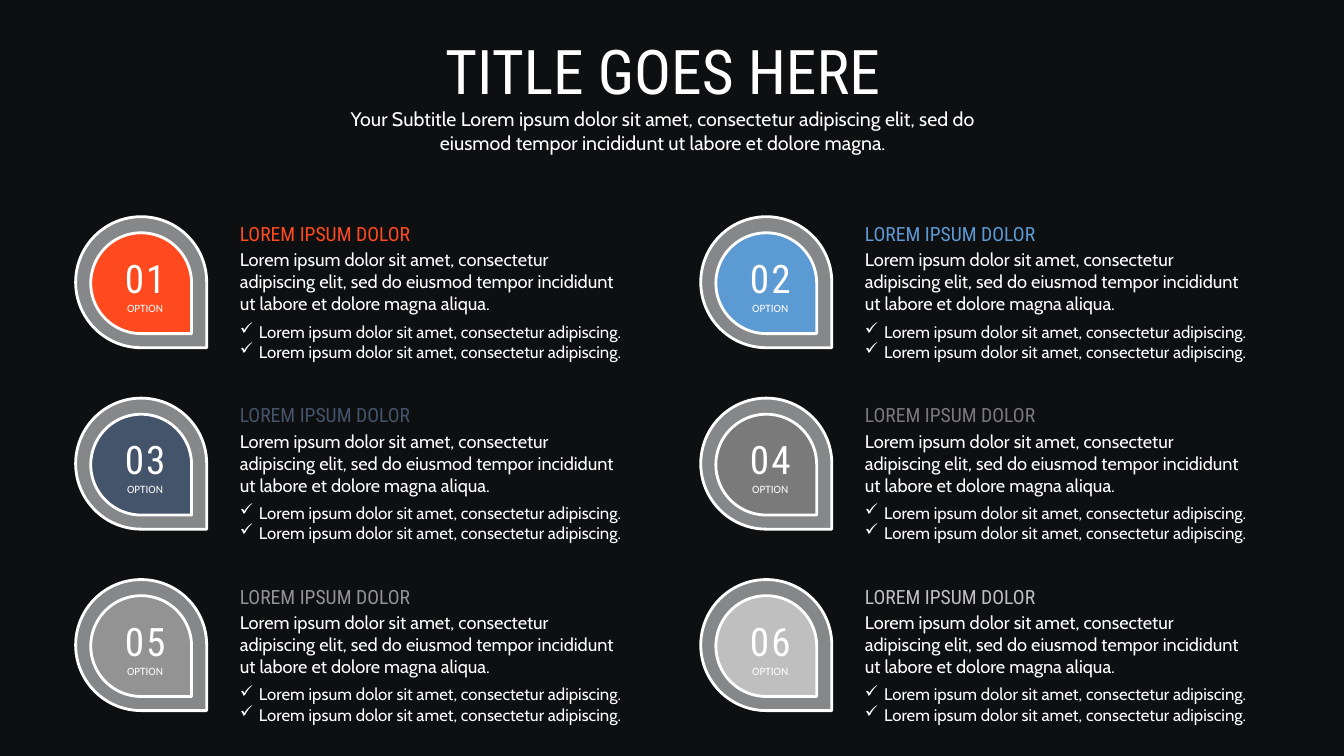
"""Build a slide of six numbered options, each with a teardrop badge and a text block."""
from dataclasses import dataclass
from typing import Any

from lxml import etree
from pptx import Presentation
from pptx.dml.color import RGBColor
from pptx.enum.shapes import MSO_SHAPE
from pptx.enum.text import MSO_ANCHOR, PP_ALIGN
from pptx.oxml.ns import qn
from pptx.util import Inches, Pt

TEARDROP = MSO_SHAPE.TEAR
TOP = MSO_ANCHOR.TOP
LEFT, CENTER = PP_ALIGN.LEFT, PP_ALIGN.CENTER

COLORS = {
    "background": "0E0F11",
    "white": "FFFFFF",
    "orange": "FE4A1E",
    "blue": "5C9AD3",
    "navy": "44546B",
    "dark gray": "7A7A7A",
    "gray": "939393",
    "light gray": "BFBFBF",
}
HEADING_FONT, BODY_FONT, LABEL_FONT = "Roboto Condensed", "Cabin", "Calibri"

SUBTITLE = ("Your Subtitle Lorem ipsum dolor sit amet, consectetur adipiscing elit, "
            "sed do eiusmod tempor incididunt ut labore et dolore magna.")
HEADING = "LOREM IPSUM DOLOR"
BODY = ("Lorem ipsum dolor sit amet, consectetur adipiscing elit, sed do eiusmod "
        "tempor incididunt ut labore et dolore magna aliqua.")
POINT = "Lorem ipsum dolor sit amet, consectetur adipiscing."

COLUMNS = 2
GRID_LEFT, GRID_TOP = 0.75, 2.15
COLUMN_STEP, ROW_STEP = 6.2, 1.8
BULLET_INDENT = 0.19


@dataclass(frozen=True)
class Option:
    """A numbered option and its accent colour."""

    number: int
    color: str

    @property
    def left(self) -> float:
        """Return the left edge of the option in inches."""
        return GRID_LEFT + (self.number - 1) % COLUMNS * COLUMN_STEP

    @property
    def top(self) -> float:
        """Return the top edge of the option in inches."""
        return GRID_TOP + (self.number - 1) // COLUMNS * ROW_STEP


OPTIONS = [
    Option(number, color)
    for number, color in enumerate(
        ["orange", "blue", "navy", "dark gray", "gray", "light gray"], start=1)
]


def rgb(color: str) -> RGBColor:
    """Return the named colour."""
    return RGBColor.from_string(COLORS[color])


def write(tf: Any, text: str, *, size: float, font: str, color: str = "white",
          align: Any = LEFT, before: float = 0, tracking: float = 0,
          bullet: str = "") -> None:
    """Append a formatted paragraph, using the first one while it is empty."""
    p = tf.paragraphs[0] if not tf.text else tf.add_paragraph()
    p.alignment = align
    p.space_before = Pt(before)
    if bullet:
        pPr = p._p.get_or_add_pPr()
        pPr.set("marL", str(Inches(BULLET_INDENT)))
        pPr.set("indent", str(-Inches(BULLET_INDENT)))
        etree.SubElement(pPr, qn("a:buChar")).set("char", bullet)
    r = p.add_run()
    r.text = text
    r.font.size = Pt(size)
    r.font.name = font
    r.font.color.rgb = rgb(color)
    if tracking:
        r._r.get_or_add_rPr().set("spc", str(int(tracking * 100)))


def add_box(shapes: Any, left: float, top: float, width: float, height: float) -> Any:
    """Add a wrapping text box and return its text frame."""
    sp = shapes.add_textbox(Inches(left), Inches(top), Inches(width), Inches(height))
    tf = sp.text_frame
    tf.word_wrap = True
    return tf


def add_teardrop(shapes: Any, left: float, top: float, size: float, color: str,
                 opacity: int = 100) -> None:
    """Add a white-edged teardrop pointing to the lower right."""
    sp = shapes.add_shape(TEARDROP, Inches(left), Inches(top), Inches(size), Inches(size))
    sp.rotation = 90
    sp.shadow.inherit = False
    sp.fill.solid()
    sp.fill.fore_color.rgb = rgb(color)
    sp.line.color.rgb = rgb("white")
    sp.line.width = Pt(2)
    if opacity < 100:
        fill = sp._element.spPr.find(qn("a:solidFill"))
        etree.SubElement(fill[0], qn("a:alpha")).set("val", str(opacity * 1000))


def add_badge(s: Any, option: Option) -> None:
    """Add the grouped teardrops with the option number."""
    shapes = s.shapes.add_group_shape().shapes
    add_teardrop(shapes, option.left, option.top, 1.3, "white", opacity=50)
    add_teardrop(shapes, option.left + 0.15, option.top + 0.16, 1, option.color)
    tf = add_box(shapes, option.left + 0.39, option.top + 0.34, 0.6, 0.67)
    tf.margin_left = tf.margin_right = Inches(0.07)
    tf.margin_top = tf.margin_bottom = Inches(0.03)
    write(tf, f"{option.number:02}", size=28, font=HEADING_FONT, align=CENTER, tracking=1.5)
    write(tf, "OPTION", size=8, font=LABEL_FONT, align=CENTER)


def add_description(s: Any, option: Option) -> None:
    """Add the heading, body and check-marked points of an option."""
    tf = add_box(s.shapes, option.left + 1.53, option.top, 4.02, 1.5)
    write(tf, HEADING, size=14, font=HEADING_FONT, color=option.color)
    write(tf, BODY, size=13, font=BODY_FONT, before=2.5)
    for before in (5, 0):
        write(tf, POINT, size=12, font=BODY_FONT, before=before, bullet="✓")


def add_title(s: Any) -> None:
    """Place and fill the title placeholder."""
    sp = s.shapes.title
    sp.left, sp.top = Inches(3.28), Inches(0.28)
    sp.width, sp.height = Inches(6.59), Inches(1.3)
    tf = sp.text_frame
    tf.word_wrap = True
    tf.vertical_anchor = TOP
    write(tf, "TITLE GOES HERE", size=44, font=HEADING_FONT, align=CENTER)
    write(tf, SUBTITLE, size=14, font=BODY_FONT, align=CENTER)


def main() -> None:
    """Build and save the presentation."""
    prs = Presentation()
    prs.slide_width, prs.slide_height = Inches(13.33), Inches(7.5)
    s = prs.slides.add_slide(prs.slide_layouts.get_by_name("Title Only"))
    s.background.fill.solid()
    s.background.fill.fore_color.rgb = rgb("background")
    add_title(s)
    for option in OPTIONS:
        add_badge(s, option)
        add_description(s, option)
    prs.save("out.pptx")


if __name__ == "__main__":
    main()
